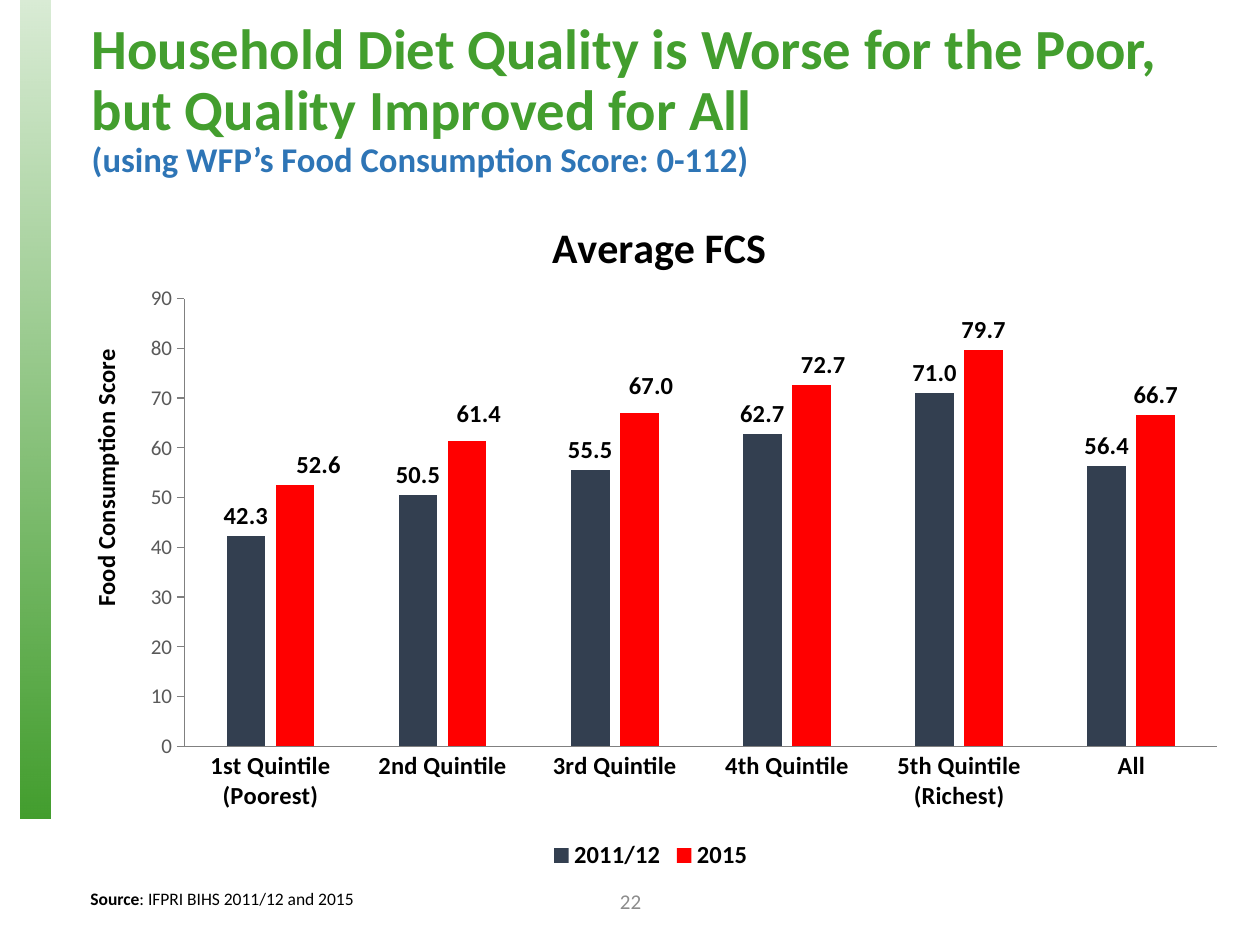
from lxml import etree
from pptx import Presentation
from pptx import util as u
from pptx.chart.data import CategoryChartData
from pptx.dml.color import RGBColor
from pptx.enum import chart as ch, shapes, text
from pptx.oxml.ns import qn

# Content
HEADING = "Household Diet Quality is Worse for the Poor, but Quality Improved for All"
SUBHEADING = "(using WFP’s Food Consumption Score: 0-112)"
CHART_TITLE = "Average FCS"
AXIS_TITLE = "Food Consumption Score"
CATEGORIES = ["1st Quintile\n(Poorest)", "2nd Quintile", "3rd Quintile",
              "4th Quintile", "5th Quintile\n(Richest)", "All"]
SERIES = [("2011/12", "333F50", (42.3, 50.5, 55.5, 62.7, 71, 56.4)),
          ("2015", "FF0000", (52.6, 61.4, 67, 72.7, 79.7, 66.7))]
# Shifts of the first labels of 2015, as fractions of the chart
LABEL_SHIFTS = [(0.02, 0), (0.01, -0.01), (0.01, -0.01), (0.01, 0)]
SOURCE = ("Source", ": IFPRI BIHS 2011/12 and 2015")
PAGE_NUMBER = "22"

GREEN, BLUE, BLACK, GREY = "439E2E", "2E75B6", "000000", "808080"
LABEL_FORMAT = "#,##0.0"
BOLD = {"size": 14, "bold": True, "color": BLACK}


def rgb(value):
    return RGBColor.from_string(value)


def style(font, size, color, bold=False):
    values = {"name": "Calibri", "size": u.Pt(size), "bold": bold}
    for name, value in values.items():
        setattr(font, name, value)
    font.color.rgb = rgb(color)


def add_span(para, words, **look):
    span = para.add_run()
    span.text = words
    style(span.font, **look)


def add_box(page, place, anchor=text.MSO_ANCHOR.TOP):
    box = page.shapes.add_textbox(*map(u.Inches, place))
    box.text_frame.word_wrap = True
    box.text_frame.vertical_anchor = anchor
    return box.text_frame.paragraphs[0]


def set_layout(parent, index, **values):
    """Give a chart part a manual position, as fractions of the chart."""
    for old in parent.findall(qn("c:layout")):
        parent.remove(old)
    layout = etree.Element(qn("c:layout"))
    manual = etree.SubElement(layout, qn("c:manualLayout"))
    for name, value in values.items():
        etree.SubElement(manual, qn(f"c:{name}")).set("val", str(value))
    parent.insert(index, layout)


def set_title(owner, words, size, x, y, title):
    add_span(title.text_frame.paragraphs[0], words, size=size, bold=True, color=BLACK)
    set_layout(owner.find(qn("c:title")), 1, xMode="edge", yMode="edge", x=x, y=y)


def add_side_band(page):
    band = page.shapes.add_shape(shapes.MSO_SHAPE.RECTANGLE,
                                 *map(u.Inches, (0.16, 0, 0.24, 6.5)))
    band.shadow.inherit = False
    band.line.fill.background()
    band.fill.gradient()
    band.fill.gradient_angle = 270
    for stop in band.fill.gradient_stops:
        stop.color.rgb = rgb(GREEN)
    # The top of the band is 20% opaque
    first = next(band.element.iter(qn("a:srgbClr")))
    etree.SubElement(first, qn("a:alpha")).set("val", "20000")


def add_score_chart(page):
    data = CategoryChartData()
    data.categories = CATEGORIES
    for name, _, values in SERIES:
        data.add_series(name, values)
    chart = page.shapes.add_chart(ch.XL_CHART_TYPE.COLUMN_CLUSTERED,
                                  *map(u.Inches, (0.48, 1.4, 9.37, 5.55)), data).chart
    style(chart.font, 10, BLACK)

    # Bars and their labels
    plot = chart.plots[0]
    plot.gap_width, plot.overlap, plot.vary_by_categories = 219, -27, False
    for series, (_, color, _) in zip(plot.series, SERIES):
        series.format.fill.solid()
        series.format.fill.fore_color.rgb = rgb(color)
        labels = series.data_labels
        labels.show_value = True
        labels.number_format = LABEL_FORMAT
        labels.number_format_is_linked = False
        labels.position = ch.XL_LABEL_POSITION.OUTSIDE_END
        style(labels.font, **BOLD)
    for index in range(len(LABEL_SHIFTS)):
        label = plot.series[1].points[index].data_label
        style(label.font, **BOLD)
        label.position = ch.XL_LABEL_POSITION.OUTSIDE_END
    for label, (x, y) in zip(list(chart.element.iter(qn("c:dLbl"))), LABEL_SHIFTS):
        set_layout(label, 1, x=x, y=y)
        number = etree.Element(qn("c:numFmt"), formatCode=LABEL_FORMAT, sourceLinked="0")
        label.insert(2, number)

    # Axes
    scores, groups = chart.value_axis, chart.category_axis
    scores.minimum_scale, scores.maximum_scale, scores.major_unit = 0, 90, 10
    scores.has_major_gridlines = False
    scores.tick_labels.number_format = "#,##0"
    scores.tick_labels.number_format_is_linked = False
    style(scores.tick_labels.font, 12, "595959")
    style(groups.tick_labels.font, **BOLD)
    for axis, tick in ((scores, ch.XL_TICK_MARK.OUTSIDE), (groups, ch.XL_TICK_MARK.NONE)):
        axis.major_tick_mark = tick
        axis.minor_tick_mark = ch.XL_TICK_MARK.NONE
        axis.format.line.color.rgb = rgb(GREY)
        axis.format.line.width = u.Pt(0.75)

    # Titles, legend and plot area
    chart.has_title = scores.has_title = True
    plot_area = next(chart.element.iter(qn("c:plotArea")))
    set_title(plot_area.getparent(), CHART_TITLE, 24, 0.41, 0.05, chart.chart_title)
    set_title(plot_area.find(qn("c:valAx")), AXIS_TITLE, 14, 0.02, 0.24, scores.axis_title)
    set_layout(plot_area, 0, layoutTarget="inner", xMode="edge", yMode="edge",
               x=0.105, y=0.175, w=0.875, h=0.64)
    chart.has_legend = True
    chart.legend.position = ch.XL_LEGEND_POSITION.BOTTOM
    chart.legend.include_in_layout = False
    style(chart.legend.font, **BOLD)


def main():
    deck = Presentation()
    deck.slide_width, deck.slide_height = u.Inches(10), u.Inches(7.5)
    page = deck.slides.add_slide(deck.slide_layouts[6])
    add_side_band(page)

    # Heading
    para = add_box(page, (0.63, 0.35, 9, 0.89), text.MSO_ANCHOR.MIDDLE)
    para.line_spacing = 0.9
    add_span(para, HEADING, size=32.4, color=GREEN, bold=True)
    para.add_line_break()
    add_span(para, SUBHEADING, size=19.8, color=BLUE, bold=True)

    add_score_chart(page)

    # Source and page number
    para = add_box(page, (0.62, 7, 7.27, 0.27))
    for words, bold in zip(SOURCE, (True, False)):
        add_span(para, words, size=10, color=BLACK, bold=bold)
    para = add_box(page, (3.88, 6.95, 2.25, 0.4), text.MSO_ANCHOR.MIDDLE)
    para.alignment = text.PP_ALIGN.CENTER
    add_span(para, PAGE_NUMBER, size=12, color="8C8C8C")

    deck.save("out.pptx")


if __name__ == "__main__":
    main()
